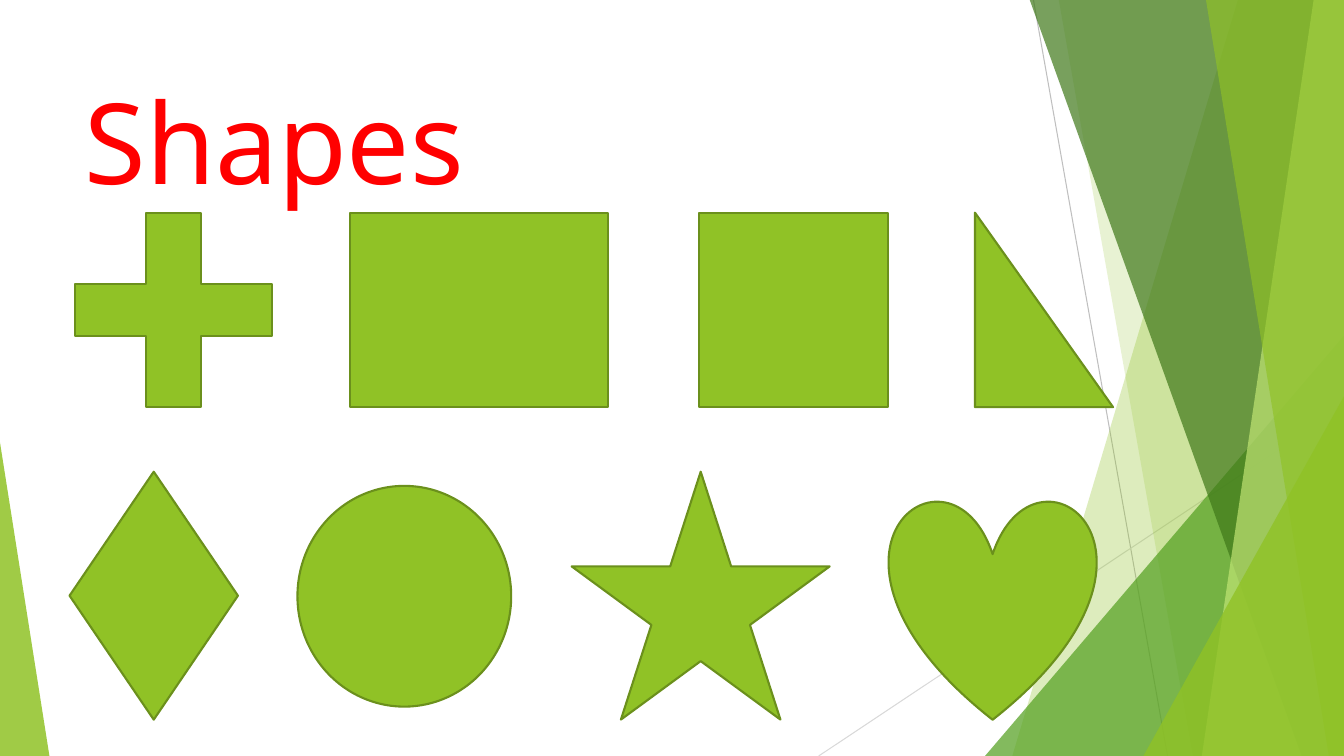
from dataclasses import dataclass
from typing import NamedTuple

from lxml.etree import SubElement
from pptx import Presentation
from pptx.dml.color import RGBColor
from pptx.enum.shapes import MSO_CONNECTOR, MSO_SHAPE
from pptx.enum.text import MSO_ANCHOR
from pptx.oxml.ns import qn
from pptx.shapes.autoshape import Shape
from pptx.shapes.shapetree import SlideShapes
from pptx.util import Pt

PX = 9144  # EMU per px, 100 px to the inch
WIDTH, HEIGHT = 1333, 750


@dataclass(frozen=True)
class Theme:
    green: str = "90C226"
    leaf: str = "54A021"
    forest: str = "3F7819"
    lime: str = "C0E474"
    outline: str = "6B901C"
    title: str = "FF0000"
    ray_dark: str = "BFBFBF"
    ray_light: str = "D9D9D9"
    font: str = "Noto Sans"
    title_size: float = 80
    outline_width: float = 1.5
    ray_width: float = 0.75


THEME = Theme()


class Ray(NamedTuple):
    x1: int
    y1: int
    x2: int
    y2: int
    color: str


class Band(NamedTuple):
    """A strip from a slanted left edge to the right side of the slide."""
    top_x: int
    bottom_x: int
    color: str
    opacity: int


class Corner(NamedTuple):
    """A right-angled triangle standing on the bottom of the slide."""
    x: int
    y: int
    width: int
    peak: int
    color: str
    opacity: int


class Figure(NamedTuple):
    kind: MSO_SHAPE
    x: int
    y: int
    width: int
    height: int
    adjustment: float | None = None


RAYS = [
    Ray(1025, 0, 1158, HEIGHT, THEME.ray_dark),
    Ray(WIDTH, 403, 812, HEIGHT, THEME.ray_light),
]

FACETS: list[Band | Corner] = [
    Band(1228, 1004, THEME.green, 30),
    Band(1050, 1183, THEME.green, 20),
    Corner(977, 333, 356, 1, THEME.leaf, 72),
    Band(1021, 1291, THEME.forest, 70),
    Band(1303, 1192, THEME.lime, 70),
    Band(1196, 1318, THEME.green, 65),
    Corner(1134, 393, 199, 1, THEME.green, 80),
    Corner(0, 439, 49, 0, THEME.green, 85),
]

ROW_TOP, ROW_HEIGHT = 211, 193
FIGURES = [
    Figure(MSO_SHAPE.CROSS, 74, ROW_TOP, 196, ROW_HEIGHT, 0.368),
    Figure(MSO_SHAPE.RECTANGLE, 347, ROW_TOP, 256, ROW_HEIGHT),
    Figure(MSO_SHAPE.RECTANGLE, 693, ROW_TOP, 188, ROW_HEIGHT),
    Figure(MSO_SHAPE.RIGHT_TRIANGLE, 967, ROW_TOP, 137, ROW_HEIGHT),
    Figure(MSO_SHAPE.DIAMOND, 69, 468, 167, 246),
    Figure(MSO_SHAPE.OVAL, 295, 482, 212, 219),
    Figure(MSO_SHAPE.STAR_5_POINT, 567, 468, 256, 246),
    Figure(MSO_SHAPE.HEART, 882, 495, 205, 219),
]


def rgb(color: str) -> RGBColor:
    return RGBColor.from_string(color)


def paint(sp: Shape, color: str, opacity: int = 100) -> None:
    """Fill a shape, without shadow, at an opacity in percent."""
    sp.shadow.inherit = False
    sp.fill.solid()
    sp.fill.fore_color.rgb = rgb(color)
    if opacity < 100:
        clr = sp.element.spPr.find(qn("a:solidFill")).find(qn("a:srgbClr"))
        SubElement(clr, qn("a:alpha"), val=str(opacity * 1000))


def add_preset(shapes: SlideShapes, figure: Figure) -> Shape:
    sp = shapes.add_shape(figure.kind, figure.x * PX, figure.y * PX,
                          figure.width * PX, figure.height * PX)
    if figure.adjustment is not None:
        sp.adjustments[0] = figure.adjustment
    return sp


def draw_ray(shapes: SlideShapes, ray: Ray) -> None:
    line = shapes.add_connector(MSO_CONNECTOR.STRAIGHT, ray.x1 * PX, ray.y1 * PX,
                                ray.x2 * PX, ray.y2 * PX)
    line.line.color.rgb = rgb(ray.color)
    line.line.width = Pt(THEME.ray_width)
    SubElement(line.element.spPr, qn("a:effectLst"))


def draw_facet(shapes: SlideShapes, facet: Band | Corner) -> None:
    if isinstance(facet, Band):
        outline = shapes.build_freeform(facet.top_x, -1, scale=PX)
        outline.add_line_segments(
            [(WIDTH, -1), (WIDTH, HEIGHT), (facet.bottom_x, HEIGHT)])
        sp = outline.convert_to_shape()
    else:
        sp = add_preset(shapes, Figure(MSO_SHAPE.ISOSCELES_TRIANGLE, facet.x, facet.y,
                                       facet.width, HEIGHT - facet.y, facet.peak))
    paint(sp, facet.color, facet.opacity)
    sp.line.fill.background()


def draw_title(shapes: SlideShapes, text: str) -> None:
    tf = shapes.add_textbox(74 * PX, 67 * PX, 940 * PX, 144 * PX).text_frame
    tf.word_wrap = True
    tf.vertical_anchor = MSO_ANCHOR.MIDDLE
    r = tf.paragraphs[0].add_run()
    r.text = text
    r.font.name = THEME.font
    r.font.size = Pt(THEME.title_size)
    r.font.color.rgb = rgb(THEME.title)


def draw_figure(shapes: SlideShapes, figure: Figure) -> None:
    sp = add_preset(shapes, figure)
    paint(sp, THEME.green)
    sp.line.color.rgb = rgb(THEME.outline)
    sp.line.width = Pt(THEME.outline_width)


def main() -> None:
    prs = Presentation()
    prs.slide_width, prs.slide_height = WIDTH * PX, HEIGHT * PX
    shapes = prs.slides.add_slide(prs.slide_layouts[6]).shapes
    for ray in RAYS:
        draw_ray(shapes, ray)
    for facet in FACETS:
        draw_facet(shapes, facet)
    draw_title(shapes, "Shapes")
    for figure in FIGURES:
        draw_figure(shapes, figure)
    prs.save("out.pptx")


if __name__ == "__main__":
    main()
